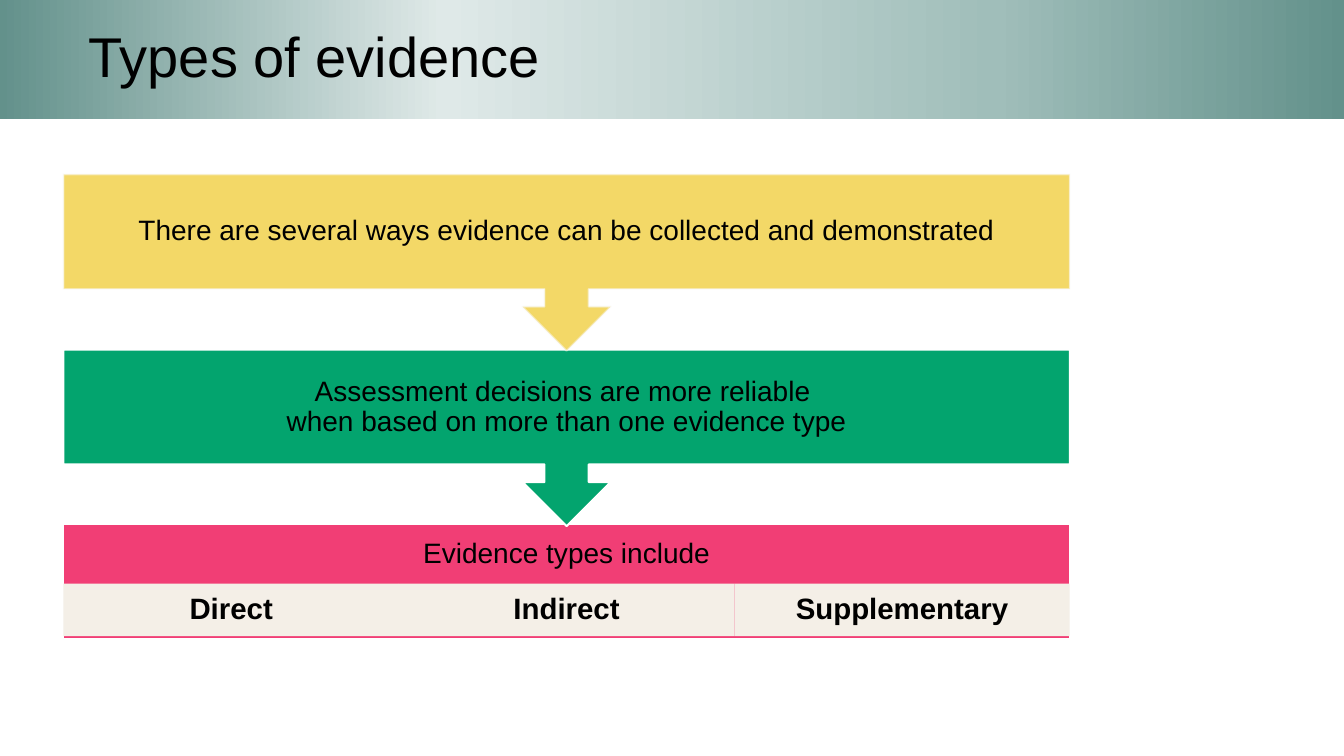
from dataclasses import dataclass

from lxml.etree import SubElement
from pptx import Presentation
from pptx.dml.color import RGBColor
from pptx.enum.shapes import MSO_SHAPE as Geom
from pptx.enum.text import MSO_ANCHOR as Anchor, PP_ALIGN as Align
from pptx.oxml.ns import qn
from pptx.util import Inches, Pt


@dataclass(frozen=True)
class Theme:
    face: str = "Arial"
    ink: str = "000000"
    white: str = "FFFFFF"
    pale: str = "F9F9F9"
    yellow: str = "F3D867"
    green: str = "03A46E"
    pink: str = "F13E75"
    cream: str = "F4EFE7"
    band: tuple = ((0, "63918B"), (33, "DFE9E8"), (74, "A0BEBA"), (100, "63918B"))
    head: int = 40
    body: int = 20
    cell: int = 21
    edge: float = 1.35


THEME = Theme()

# Shared geometry of the flow
LEFT, WIDTH = 0.63, 9.98
TOP, STEP, TALL = 1.73, 1.74, 1.75
PAD = 0.16


def apply(target, values):
    """Set each named format value on the target."""
    for name, value in values.items():
        setattr(target, name, value)


def add_box(slide, geom, left, top, width, height, fill=None, line=None):
    box = slide.shapes.add_shape(
        geom, Inches(left), Inches(top), Inches(width), Inches(height))
    box.shadow.inherit = False
    if fill:
        box.fill.solid()
        box.fill.fore_color.rgb = RGBColor.from_string(fill)
    if line:
        box.line.color.rgb = RGBColor.from_string(line)
        box.line.width = Pt(THEME.edge)
    else:
        box.line.fill.background()
    return box


def add_text(box, text, size, pads, align=Align.CENTER, bold=False):
    """Write text in a box; pads are left, top, right and bottom."""
    frame = box.text_frame
    sides = ("margin_left", "margin_top", "margin_right", "margin_bottom")
    apply(frame, dict(zip(sides, map(Inches, pads))))
    apply(frame, {"word_wrap": True, "vertical_anchor": Anchor.MIDDLE})
    para = frame.paragraphs[0]
    para.text = text
    apply(para, {"alignment": align, "line_spacing": 0.9})
    for run in para.runs:
        apply(run.font, {"name": THEME.face, "size": Pt(size), "bold": bold})
        run.font.color.rgb = RGBColor.from_string(THEME.ink)


def add_title(slide, text):
    bar = add_box(slide, Geom.RECTANGLE, 0, 0, 13.33, 1.18)
    bar.fill.gradient()
    bar.fill.gradient_angle = 0
    # Replace the default stops with the four of the band
    stops = bar._element.spPr.find(".//" + qn("a:gsLst"))
    stops.clear()
    for place, color in THEME.band:
        stop = SubElement(stops, qn("a:gs"), pos=str(place * 1000))
        SubElement(stop, qn("a:srgbClr"), val=color)
    add_text(bar, text, THEME.head, (0.88, 0.05, 0.1, 0.05), Align.LEFT)


def add_step(slide, row, text, fill, line):
    box = add_box(slide, Geom.DOWN_ARROW_CALLOUT,
                  LEFT, TOP + row * STEP, WIDTH, TALL, fill, line)
    add_text(box, text, THEME.body, [PAD] * 4)
    return box


def fade_line(box, percent):
    color = box.line._ln.find(".//" + qn("a:srgbClr"))
    SubElement(color, qn("a:alpha"), val=str(percent * 1000))


def add_types(slide, text, names):
    top, tall, head = TOP + 2 * STEP - 0.01, 1.14, 0.61
    box = add_box(slide, Geom.RECTANGLE, LEFT, top, WIDTH, tall,
                  THEME.pink, THEME.white)
    add_text(box, text, THEME.body, (PAD, PAD, PAD, PAD + tall - head))
    # Equal cells across the foot of the box
    width = WIDTH / len(names)
    for col, name in enumerate(names):
        cell = add_box(slide, Geom.RECTANGLE, LEFT + col * width, 5.79,
                       width, 0.52, THEME.cream)
        add_text(cell, name, THEME.cell, (PAD, 0.03, PAD, 0.03), bold=True)


def main():
    deck = Presentation()
    apply(deck, {"slide_width": Inches(13.33), "slide_height": Inches(7.5)})
    slide = deck.slides.add_slide(deck.slide_layouts[6])

    # Title band
    add_title(slide, "Types of evidence")

    # Flow, from the last step up so each arrow tip lies on top
    add_types(slide, "Evidence types include",
              ("Direct", "Indirect", "Supplementary"))
    add_step(slide, 1, "Assessment decisions are more reliable \n"
             "when based on more than one evidence type",
             THEME.green, THEME.white)
    first = add_step(
        slide, 0,
        "There are several ways evidence can be collected and demonstrated",
        THEME.yellow, THEME.pale)
    fade_line(first, 50)

    deck.save("out.pptx")


if __name__ == "__main__":
    main()
